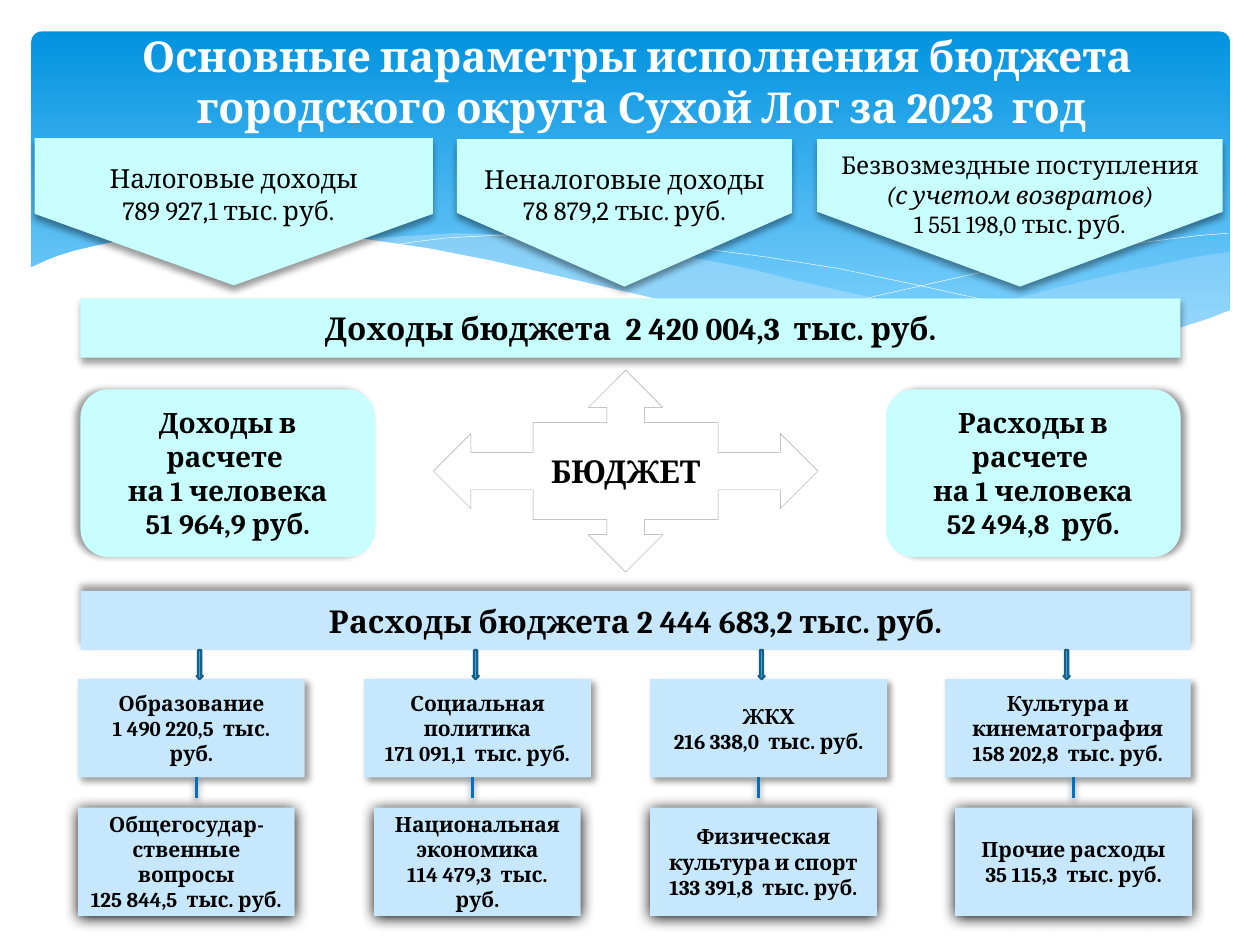
from lxml.etree import SubElement
from pptx import Presentation
from pptx.dml.color import RGBColor as RGB
from pptx.enum.shapes import MSO_CONNECTOR, MSO_SHAPE as SHAPE
from pptx.enum.text import MSO_ANCHOR as ANCHOR, PP_ALIGN as ALIGN
from pptx.oxml.ns import qn
from pptx.util import Pt

COLORS = {
    "sky_top": "0293E0", "sky_bottom": "83D3FE", "white": "FFFFFF", "black": "000000",
    "income": "C8FEFD", "expense": "C6E7FC", "outline": "A6A6A6",
    "arrow": "31B6FD", "arrow_edge": "195F84", "link": "0070C0",
}
COLORS = {name: RGB.from_string(value) for name, value in COLORS.items()}
FONT = "Cambria"

deck = Presentation()
deck.slide_width, deck.slide_height = Pt(720), Pt(540)
page = deck.slides.add_slide(deck.slide_layouts[6])
shapes = page.shapes


def cast_shadow(shape, alpha, blur, distance, angle):
    effects = SubElement(shape._element.spPr, qn("a:effectLst"))
    shadow = SubElement(effects, qn("a:outerShdw"), blurRad=str(Pt(blur)),
                        dist=str(Pt(distance)), dir=str(angle * 60000),
                        algn="ctr", rotWithShape="0")
    color = SubElement(shadow, qn("a:srgbClr"), val=str(COLORS["black"]))
    SubElement(color, qn("a:alpha"), val=str(alpha * 1000))


def add_panel(kind, frame, fill, lines, size, bold=True, shadow=None):
    panel = shapes.add_shape(kind, *[Pt(value) for value in frame])
    panel.fill.solid()
    panel.fill.fore_color.rgb = COLORS[fill]
    panel.line.fill.background()
    if shadow:
        cast_shadow(panel, *shadow)
    else:
        panel.shadow.inherit = False
    text = panel.text_frame
    text.word_wrap = True
    text.vertical_anchor = ANCHOR.MIDDLE
    text.text = "\n".join(lines)
    for para in text.paragraphs:
        para.alignment = ALIGN.CENTER
        para.font.name, para.font.size, para.font.bold = FONT, Pt(size), bold
        para.font.color.rgb = COLORS["black"]
    return panel


# Sky band
sky = shapes.add_shape(SHAPE.ROUNDED_RECTANGLE, Pt(18), Pt(18), Pt(684.7), Pt(194.4))
sky.adjustments[0] = 0.03
sky.shadow.inherit = False
sky.line.fill.background()
sky.fill.gradient()
sky.fill.gradient_angle = 270
for stop, name, position in zip(sky.fill.gradient_stops, ("sky_top", "sky_bottom"), (0, 0.9)):
    stop.color.rgb, stop.position = COLORS[name], position

# Waves, in hundredths of an inch: fill, opacity in percent, points
waves = [
    ("expense", 29, [
        (975, 200), (948, 204), (921, 210), (891, 216), (861, 223), (805, 237), (753, 248),
        (706, 257), (661, 265), (691, 269), (719, 272), (745, 275), (769, 277), (803, 278),
        (835, 277), (863, 275), (889, 272), (913, 267), (935, 262), (949, 257), (963, 252),
        (976, 247), (976, 200)]),
    ("expense", 40, [
        (893, 273), (866, 269), (807, 260), (741, 247), (668, 231), (629, 222), (598, 214),
        (569, 208), (541, 203), (514, 198), (489, 194), (442, 189), (399, 186), (361, 185),
        (328, 187), (299, 189), (286, 191), (323, 196), (362, 203), (404, 211), (449, 222),
        (530, 240), (601, 255), (650, 264), (695, 270), (736, 275), (773, 277), (818, 278),
        (857, 277), (893, 273)]),
    (None, 100, [
        (309, 195), (328, 192), (353, 189), (387, 187), (433, 187), (469, 189), (510, 192),
        (556, 197), (608, 204), (665, 213), (727, 226), (795, 241), (869, 261), (907, 272)]),
    (None, 100, [
        (613, 257), (653, 246), (695, 235), (748, 223), (806, 210), (866, 199), (910, 192),
        (951, 187), (975, 185)]),
    ("white", 100, [
        (977, 246), (959, 253), (940, 259), (920, 265), (899, 269), (875, 273), (850, 275),
        (823, 277), (793, 276), (761, 275), (726, 272), (688, 268), (648, 262), (603, 254),
        (555, 245), (503, 233), (447, 220), (391, 207), (340, 197), (292, 190), (250, 186),
        (211, 184), (177, 184), (146, 185), (119, 187), (95, 191), (76, 195), (59, 199),
        (46, 203), (36, 207), (23, 213), (23, 329), (977, 329)]),
]
for fill, opacity, points in waves:
    builder = shapes.build_freeform(*points[0], scale=Pt(0.72))
    builder.add_line_segments(points[1:], close=fill is not None)
    wave = builder.convert_to_shape()
    wave.shadow.inherit = False
    if fill:
        wave.fill.solid()
        wave.fill.fore_color.rgb = COLORS[fill]
        wave.line.fill.background()
        color = wave._element.spPr.find(".//" + qn("a:srgbClr"))
        SubElement(color, qn("a:alpha"), val=str(opacity * 1000))
    else:
        wave.fill.background()
        wave.line.color.rgb = COLORS["white"]
        wave.line.width = Pt(0.25)

# Title
box = shapes.add_textbox(Pt(44.6), Pt(20.9), Pt(644.4), Pt(50.4))
box.text_frame.word_wrap = True
box.text_frame.vertical_anchor = ANCHOR.MIDDLE
para = box.text_frame.paragraphs[0]
para.text = "Основные параметры исполнения бюджета \vгородского округа Сухой Лог за 2023  год"
para.alignment = ALIGN.CENTER
para.font.name, para.font.size, para.font.bold = FONT, Pt(24.3), True
para.font.color.rgb = COLORS["white"]

# Budget hub
hub = add_panel(SHAPE.QUAD_ARROW_CALLOUT, (247.7, 211.5, 219.6, 115.4), "white", ["БЮДЖЕТ"], 18)
hub.line.color.rgb = COLORS["outline"]
hub.line.width = Pt(0.25)

# Total bars
add_panel(SHAPE.RECTANGLE, (46, 170.6, 628.6, 33.8), "income",
          ["Доходы бюджета  2 420 004,3  тыс. руб."], 18, shadow=(40, 4, 3, 90))
add_panel(SHAPE.RECTANGLE, (46, 337.7, 634.3, 33.8), "expense",
          ["Расходы бюджета 2 444 683,2 тыс. руб."], 18, shadow=(40, 4, 3, 270))

# Income sources: pentagons turned to point down, text kept upright
sources = [
    (133.6, 121, 227.5, 0.485, 15, ["Налоговые доходы", "789 927,1 тыс. руб.  "]),
    (356.8, 121.7, 191.5, 0.5, 15, ["Неналоговые доходы", "78 879,2 тыс. руб."]),
    (582.8, 121.7, 231.8, 0.508, 14, ["Безвозмездные поступления", " (с учетом возвратов) ",
                                      "1 551 198,0 тыс. руб."]),
]
depth = 84.2
for center_x, center_y, width, tip, size, lines in sources:
    frame = (center_x - depth / 2, center_y - width / 2, depth, width)
    source = add_panel(SHAPE.PENTAGON, frame, "income", lines, size, False, (40, 4, 3, 90))
    source.rotation = 90
    source.adjustments[0] = tip
    source.text_frame._txBody.bodyPr.set("vert", "vert270")
source.text_frame.paragraphs[1].font.italic = True

# Per-person figures
for left, angle, lines in [
    (46, 180, ["Доходы в расчете ", "на 1 человека", "51 964,9 руб."]),
    (506.2, 0, ["Расходы в расчете ", "на 1 человека", "52 494,8  руб."]),
]:
    add_panel(SHAPE.ROUNDED_RECTANGLE, (left, 222.5, 168.5, 95.8), "income", lines, 16,
              shadow=(40, 4, 3, angle))

# Expense cards: top, height, shadow, then left, width and text of each
card_rows = [
    (388.1, 56.2, (40, 4, 3, 45), [
        (44.6, 129.6, ["Образование", "1 490 220,5  тыс. руб."]),
        (208.1, 129.6, ["Социальная политика", "171 091,1  тыс. руб."]),
        (371.5, 135.4, ["ЖКХ", "216 338,0  тыс. руб."]),
        (540, 140.4, ["Культура и кинематография", "158 202,8  тыс. руб."])]),
    (461.5, 61.9, (100, 8.5, 1, 90), [
        (44.6, 123.8, ["Общегосудар-", "ственные вопросы", "125 844,5  тыс. руб."]),
        (213.8, 118.1, ["Национальная экономика", "114 479,3  тыс. руб."]),
        (371.5, 129.6, ["Физическая культура и спорт", "133 391,8  тыс. руб."]),
        (545.8, 135.4, ["Прочие расходы", "35 115,3  тыс. руб."])]),
]
for top, height, shadow, cards in card_rows:
    for left, width, lines in cards:
        add_panel(SHAPE.RECTANGLE, (left, top, width, height), "expense", lines, 12,
                  shadow=shadow)

# Arrows into the first row, links to the second
for arrow_x, link_x in [(112.3, 112.3), (270, 270), (433.4, 433.4), (607.7, 613.4)]:
    arrow = shapes.add_shape(SHAPE.DOWN_ARROW, Pt(arrow_x), Pt(371.5), Pt(3.6), Pt(16.6))
    arrow.shadow.inherit = False
    arrow.fill.solid()
    arrow.fill.fore_color.rgb = COLORS["arrow"]
    arrow.line.color.rgb = COLORS["arrow_edge"]
    arrow.line.width = Pt(1.25)
    link = shapes.add_connector(MSO_CONNECTOR.STRAIGHT, Pt(link_x), Pt(444.3),
                                Pt(link_x), Pt(455.8))
    link.line.color.rgb = COLORS["link"]
    link.line.width = Pt(2)
    cast_shadow(link, 38, 4, 2, 90)

deck.save("out.pptx")
